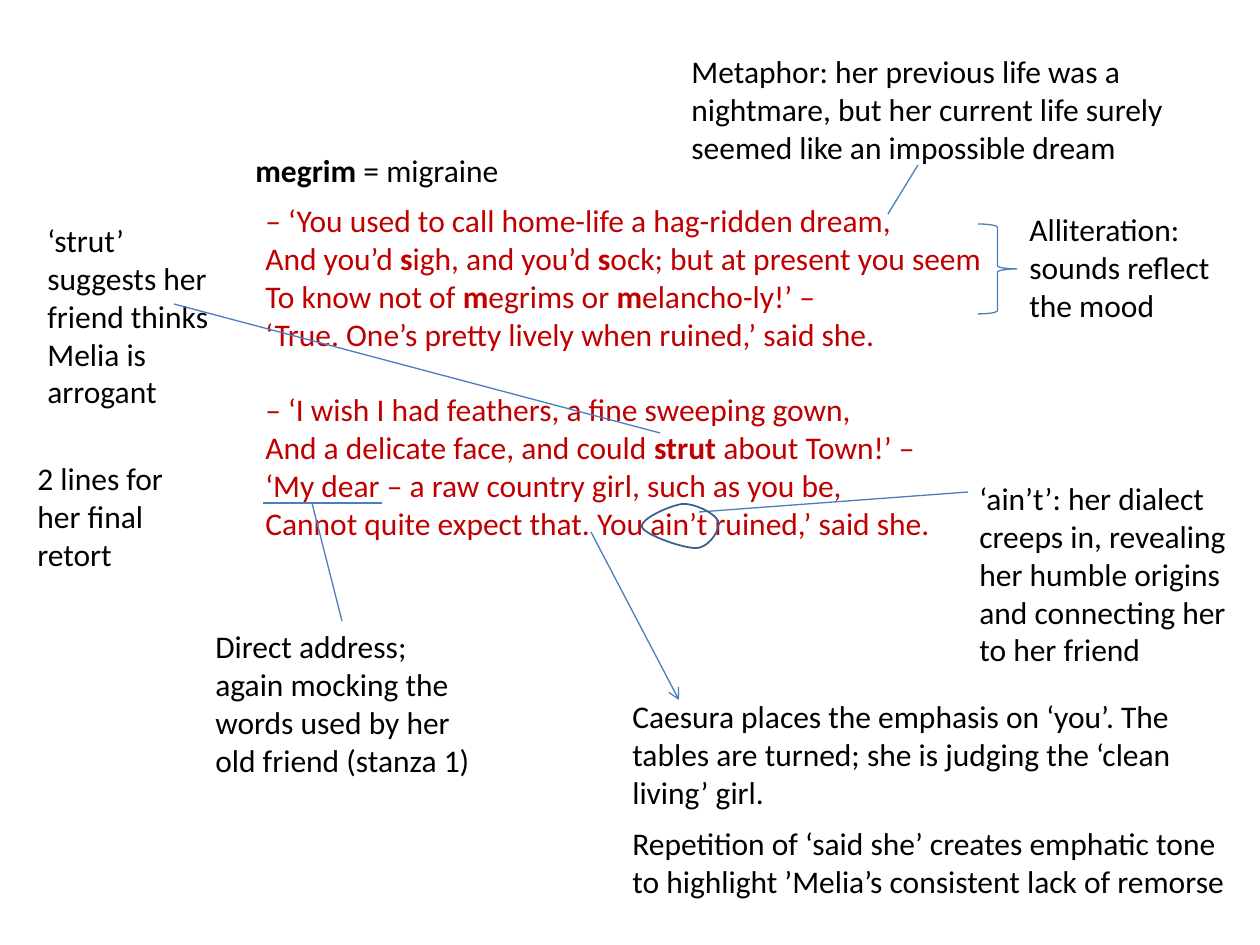
from typing import NamedTuple

from lxml.etree import SubElement
from pptx import Presentation
from pptx.dml.color import RGBColor
from pptx.enum.shapes import MSO_CONNECTOR as Link, MSO_SHAPE as Shape
from pptx.oxml.ns import qn
from pptx.util import Pt

PX = 914400 / 126  # EMU in one px
BLACK = RGBColor(0x00, 0x00, 0x00)
RED = RGBColor(0xC0, 0x00, 0x00)
BLUE = RGBColor(0x4B, 0x7E, 0xBC)
NAVY = RGBColor(0x3A, 0x5F, 0x8C)


class Note(NamedTuple):
    left: int
    top: int
    width: int
    height: int
    text: str  # *stars* mark bold words


class Line(NamedTuple):
    x1: int
    y1: int
    x2: int
    y2: int
    arrow: bool = False


POEM_BOX = (253, 195, 781, 357)
STANZAS = [
    [
        "– ‘You used to call home-life a hag-ridden dream,",
        "And you’d *s*igh, and you’d *s*ock; but at present you seem",
        "To know not of *m*egrims or *m*elancho-ly!’ –",
        "‘True. One’s pretty lively when ruined,’ said she.",
    ],
    [
        "– ‘I wish I had feathers, a fine sweeping gown,",
        "And a delicate face, and could *strut* about Town!’ –",
        "‘My dear – a raw country girl, such as you be,",
        "Cannot quite expect that. You ain’t ruined,’ said she.",
    ],
]
NOTES = [
    Note(679, 46, 561, 127, "Metaphor: her previous life was a nightmare, "
         "but her current life surely seemed like an impossible dream"),
    Note(1017, 204, 218, 127, "Alliteration: sounds reflect the mood"),
    Note(25, 453, 189, 127, "2 lines for her final retort"),
    Note(203, 621, 287, 165, "Direct address; again mocking the words "
         "used by her old friend (stanza 1)"),
    Note(620, 691, 593, 127, "Caesura places the emphasis on ‘you’. The tables "
         "are turned; she is judging the ‘clean living’ girl."),
    Note(967, 473, 274, 204, "‘ain’t’: her dialect creeps in, revealing her "
         "humble origins and connecting her to her friend"),
    Note(243, 145, 287, 50, "*megrim* = migraine"),
    Note(35, 215, 189, 204, "‘strut’ suggests her friend thinks Melia is arrogant"),
    Note(620, 818, 625, 89, "Repetition of ‘said she’ creates emphatic tone "
         "to highlight ’Melia’s consistent lack of remorse"),
]
LINES = [
    Line(888, 214, 918, 165),  # metaphor
    Line(263, 503, 382, 503),  # underline of "My dear"
    Line(312, 503, 342, 621),  # direct address
    Line(591, 532, 679, 700, arrow=True),  # caesura
    Line(699, 512, 968, 492),  # dialect
    Line(660, 433, 174, 304),  # strut
]
# Ring round "ain't": start, then two controls and an end per curve
START = (642, 527)
CURVES = [
    ((640, 519), (669, 506), (682, 504)),
    ((694, 503), (715, 513), (718, 521)),
    ((721, 530), (709, 547), (697, 548)),
    ((685, 549), (645, 535), START),
]


def emu(*values: int) -> list[int]:
    return [round(v * PX) for v in values]


def add_text(slide, box: tuple, lines: list[str], color: RGBColor) -> list:
    frame = slide.shapes.add_textbox(*emu(*box)).text_frame
    frame.word_wrap = True
    paras = []
    for i, line in enumerate(lines):
        para = frame.add_paragraph() if i else frame.paragraphs[0]
        font = para.font
        font.name, font.size, font.color.rgb = "Calibri", Pt(18), color
        for j, part in enumerate(line.split("*")):
            if part:
                run = para.add_run()
                run.text = part
                if j % 2:
                    run.font.bold = True
        paras.append(para)
    return paras


def add_line(slide, line: Line) -> None:
    link = slide.shapes.add_connector(Link.STRAIGHT, *emu(*line[:4]))
    link.line.color.rgb, link.line.width = BLUE, Pt(0.75)
    SubElement(link._element.spPr, qn("a:effectLst"))
    if line.arrow:
        SubElement(link.line._get_or_add_ln(), qn("a:tailEnd"), type="arrow")


def outline(shape, color: RGBColor, width: float) -> None:
    shape.shadow.inherit = False
    shape.fill.background()
    shape.line.color.rgb, shape.line.width = color, Pt(width)


def trace(start: tuple, curves: list, steps: int = 16) -> list[tuple]:
    points = []
    for a, b, end in curves:
        for i in range(1, steps + 1):
            t = i / steps
            u = 1 - t
            points.append(tuple(
                round((u**3 * p + 3 * u * u * t * q + 3 * u * t * t * r + t**3 * s) * PX)
                for p, q, r, s in zip(start, a, b, end)))
        start = end
    return points


def main() -> None:
    deck = Presentation()
    deck.slide_width, deck.slide_height = emu(1260, 945)
    slide = deck.slides.add_slide(deck.slide_layouts[6])

    # Poem, with a line's gap between stanzas
    paras = add_text(slide, POEM_BOX, sum(STANZAS, []), RED)
    paras[len(STANZAS[0])].space_before = Pt(21.6)

    # Notes and their pointers
    for note in NOTES:
        add_text(slide, note[:4], [note.text], BLACK)
    for line in LINES:
        add_line(slide, line)

    # Brace beside the alliteration
    brace = slide.shapes.add_shape(Shape.RIGHT_BRACE, *emu(978, 224, 39, 90))
    outline(brace, BLUE, 0.75)

    # Ring round the dialect word
    pen = slide.shapes.build_freeform(*emu(*START))
    pen.add_line_segments(trace(START, CURVES), close=True)
    outline(pen.convert_to_shape(), NAVY, 1)

    deck.save("out.pptx")


if __name__ == "__main__":
    main()
